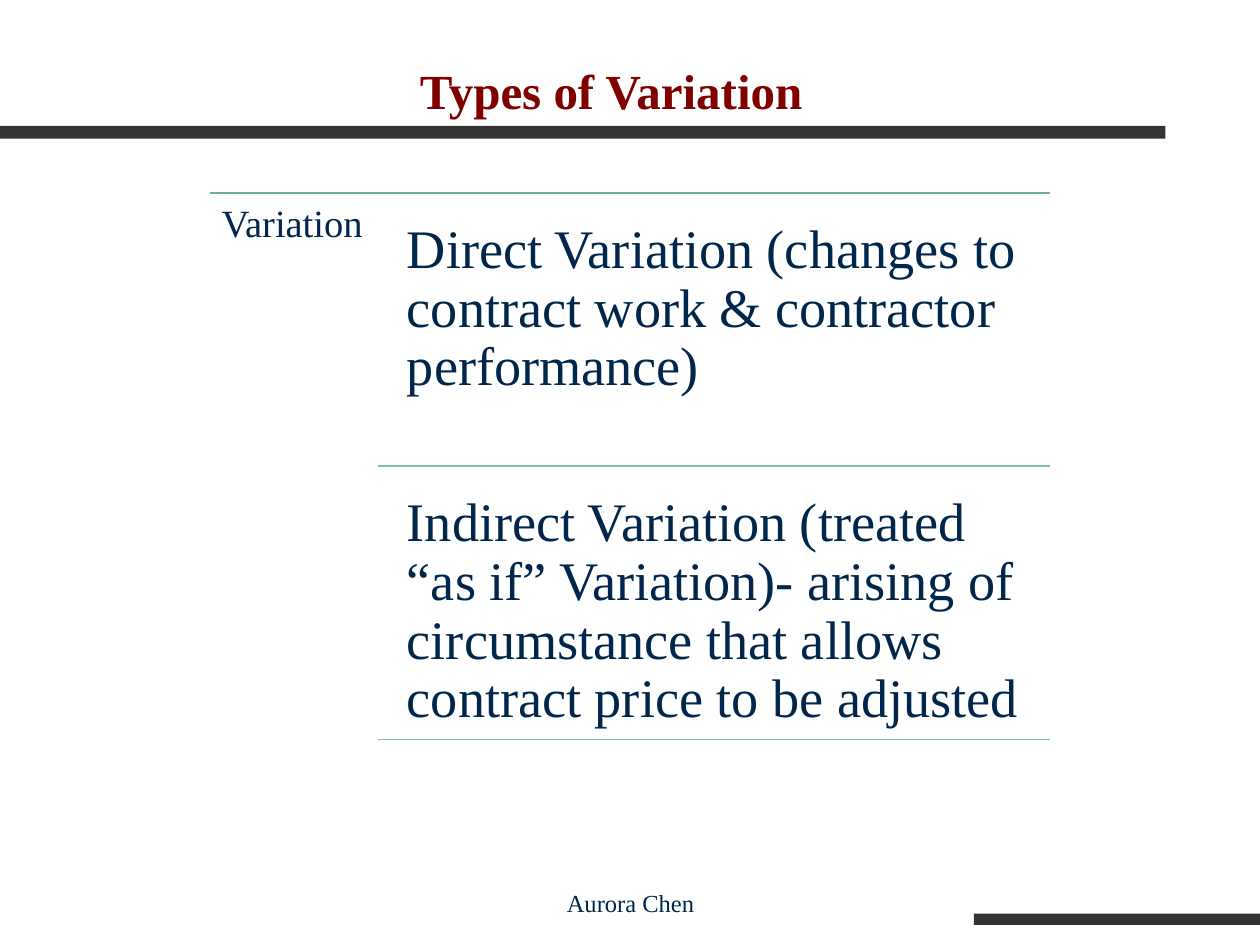
import dataclasses

import lxml.etree
import pptx
import pptx.dml.color
import pptx.enum.shapes
import pptx.enum.text
import pptx.oxml.ns
import pptx.util

EMU_PER_PX = 9144  # 100 px to the inch
ANCHOR = pptx.enum.text.MSO_ANCHOR
ALIGN = pptx.enum.text.PP_ALIGN


@dataclasses.dataclass(frozen=True)
class Theme:
    font: str = "Times New Roman"
    bar: str = "333333"
    title: str = "800000"
    text: str = "00264C"
    main_rule: str = "6DAEA2"
    type_rule: str = "78C0B2"
    title_size: int = 28
    topic_size: int = 22
    type_size: int = 31
    presenter_size: int = 14
    rule_width: int = 1


THEME = Theme()


def px(length):
    return pptx.util.Emu(length * EMU_PER_PX)


def rgb(value):
    return pptx.dml.color.RGBColor.from_string(value)


def write(frame, wording, size, color, bold=False, align=ALIGN.LEFT,
          anchor=ANCHOR.TOP, spacing=1.0, insets=(10, 5)):
    """Fill a text frame with one formatted run; insets are (side, top) px."""
    frame.word_wrap = True
    frame.auto_size = pptx.enum.text.MSO_AUTO_SIZE.NONE
    frame.vertical_anchor = anchor
    frame.margin_left = frame.margin_right = px(insets[0])
    frame.margin_top = frame.margin_bottom = px(insets[1])
    paragraph = frame.paragraphs[0]
    paragraph.alignment = align
    paragraph.line_spacing = spacing
    run = paragraph.add_run()
    run.text = wording
    run.font.name = THEME.font
    run.font.size = pptx.util.Pt(size)
    run.font.bold = bold
    run.font.color.rgb = rgb(color)


def add_text(slide, box, wording, size, **layout):
    label = slide.shapes.add_textbox(*map(px, box))
    write(label.text_frame, wording, size, THEME.text, **layout)


def add_bar(slide, box):
    bar = slide.shapes.add_shape(
        pptx.enum.shapes.MSO_SHAPE.RECTANGLE, *map(px, box))
    bar.shadow.inherit = False
    bar.fill.solid()
    bar.fill.fore_color.rgb = rgb(THEME.bar)
    bar.line.fill.background()


def add_rule(slide, left, right, y, color):
    rule = slide.shapes.add_connector(
        pptx.enum.shapes.MSO_CONNECTOR.STRAIGHT,
        px(left), px(y), px(right), px(y))
    rule.line.color.rgb = rgb(color)
    rule.line.width = pptx.util.Pt(THEME.rule_width)
    lxml.etree.SubElement(
        rule.element.spPr, pptx.oxml.ns.qn("a:effectLst"))


def add_title(slide, box, wording):
    title = slide.shapes.title
    title.left, title.top, title.width, title.height = map(px, box)
    write(title.text_frame, wording, THEME.title_size, THEME.title,
          bold=True, align=ALIGN.CENTER, anchor=ANCHOR.BOTTOM)


def add_breakdown(slide, box, topic, types):
    """Place the topic at the left and its types in ruled rows beside it."""
    left, top, width, height = box
    right = left + width
    topic_width = width // 5
    gap = 10
    row_height = (height - gap * (len(types) + 1)) // len(types)
    types_left = left + topic_width

    add_rule(slide, left, right, top, THEME.main_rule)
    add_text(slide, (left, top, topic_width, height), topic,
             THEME.topic_size, spacing=0.9, insets=(9, 9))
    for index, variation_type in enumerate(types):
        row_top = top + gap + index * (row_height + gap)
        text_left = types_left + gap
        add_text(slide, (text_left, row_top, right - text_left, row_height),
                 variation_type, THEME.type_size, spacing=0.9,
                 insets=(13, 13))
        add_rule(slide, types_left, right, row_top + row_height,
                 THEME.type_rule)


def add_presenter(slide, box, name):
    add_text(slide, box, name, THEME.presenter_size,
             align=ALIGN.CENTER, anchor=ANCHOR.BOTTOM)


def main():
    deck = pptx.Presentation()
    deck.slide_width, deck.slide_height = px(1000), px(750)
    slide = deck.slides.add_slide(
        deck.slide_layouts.get_by_name("Title Only"))
    add_bar(slide, (0, 100, 925, 10))
    add_bar(slide, (773, 725, 227, 9))
    add_title(slide, (0, 31, 970, 69), "Types of Variation")
    add_breakdown(slide, (167, 153, 666, 444), "Variation", [
        "Direct Variation (changes to contract work & contractor "
        "performance)",
        "Indirect Variation (treated “as if” Variation)- arising of "
        "circumstance that allows contract price to be adjusted",
    ])
    add_presenter(slide, (342, 683, 317, 50), "Aurora Chen")
    deck.save("out.pptx")


if __name__ == "__main__":
    main()
